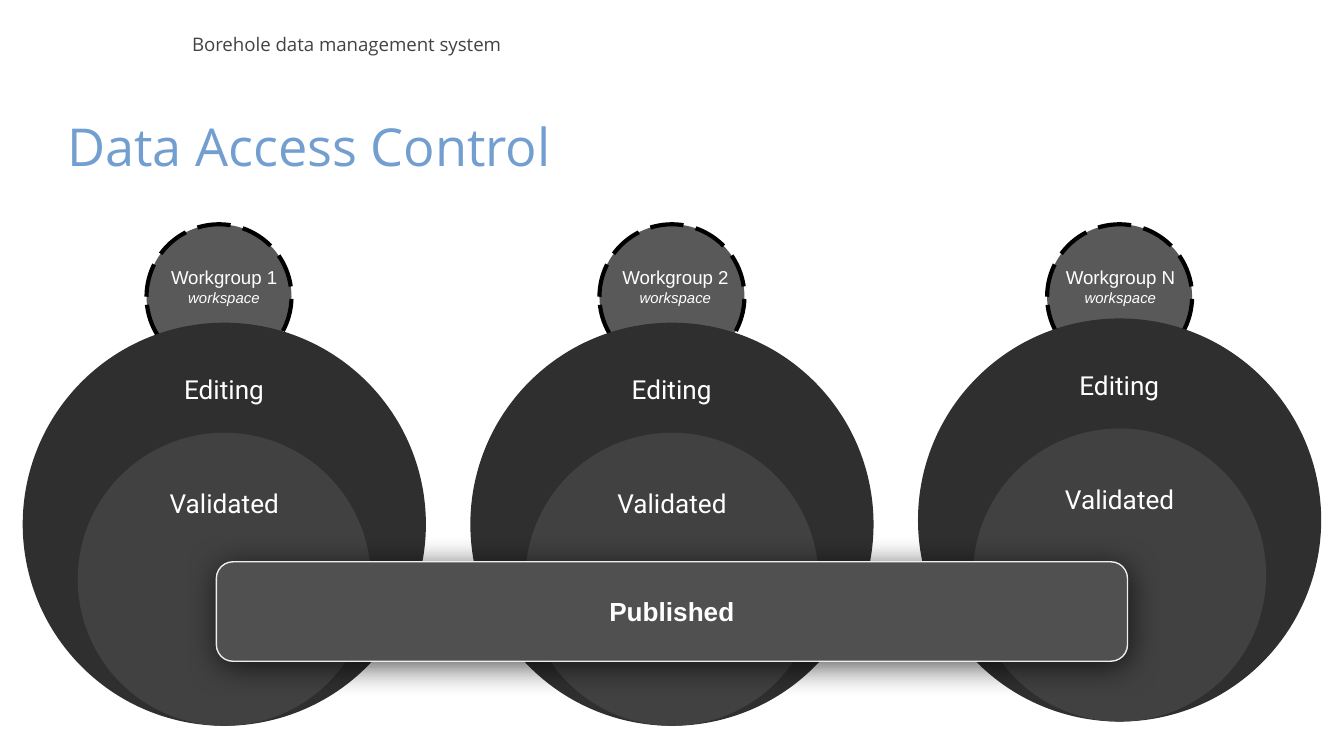
"""Build the Data Access Control slide with three workgroups and a shared published area."""
from lxml import etree
from pptx import Presentation
from pptx.dml.color import RGBColor
from pptx.enum.dml import MSO_LINE
from pptx.enum.shapes import MSO_SHAPE
from pptx.enum.text import MSO_ANCHOR, MSO_AUTO_SIZE, PP_ALIGN
from pptx.oxml import parse_xml
from pptx.oxml.ns import nsdecls
from pptx.util import Cm, Pt

BLACK = RGBColor(0x00, 0x00, 0x00)
WHITE = RGBColor(0xFF, 0xFF, 0xFF)
TITLE_BLUE = RGBColor(0x72, 0x9F, 0xCF)
HEADER_GRAY = RGBColor(0x43, 0x43, 0x43)
WORKSPACE_GRAY = RGBColor(0x59, 0x59, 0x59)
EDITING_GRAY = RGBColor(0x2F, 0x2F, 0x2F)
VALIDATED_GRAY = RGBColor(0x41, 0x41, 0x41)
PUBLISHED_GRAY = RGBColor(0x50, 0x50, 0x50)
BORDER_GRAY = RGBColor(0xEE, 0xEE, 0xEE)


def add_circle(shapes, left, top, size, color):
    circle = shapes.add_shape(MSO_SHAPE.OVAL, Cm(left), Cm(top), Cm(size), Cm(size))
    circle.shadow.inherit = False
    circle.fill.solid()
    circle.fill.fore_color.rgb = color
    circle.line.fill.background()
    return circle


def set_text(shape, lines, font_name, color, align=PP_ALIGN.CENTER, anchor=MSO_ANCHOR.MIDDLE):
    frame = shape.text_frame
    frame.word_wrap = True
    frame.auto_size = MSO_AUTO_SIZE.NONE
    frame.vertical_anchor = anchor
    frame.margin_left = frame.margin_right = frame.margin_top = frame.margin_bottom = Cm(0.25)
    frame.text = "\n".join(text for text, size in lines)
    for paragraph, (text, size) in zip(frame.paragraphs, lines):
        paragraph.alignment = align
        paragraph.font.name = font_name
        paragraph.font.size = Pt(size)
        paragraph.font.color.rgb = color
    return frame


presentation = Presentation()
presentation.slide_width = Cm(25.4)
presentation.slide_height = Cm(14.29)
slide = presentation.slides.add_slide(presentation.slide_layouts[5])

header = slide.shapes.add_textbox(Cm(3.38), Cm(0.46), Cm(20.9), Cm(0.74))
set_text(header, [("Borehole data management system", 10)], "Open Sans", HEADER_GRAY, PP_ALIGN.LEFT)

title = slide.shapes.title
title.left, title.top, title.width, title.height = Cm(1.02), Cm(1.9), Cm(23.52), Cm(1.98)
set_text(title, [("Data Access Control", 28)], "Open Sans", TITLE_BLUE, PP_ALIGN.LEFT, MSO_ANCHOR.TOP)

workgroups = [
    ("Workgroup 1", 2.77, 6.1, 2.57),
    ("Workgroup 2", 11.33, 6.1, 11.1),
    ("Workgroup N", 19.79, 6.02, 19.51),
]
for index, (name, workspace_left, top, label_left) in enumerate(workgroups):
    left = 0.43 + index * 8.46
    group = slide.shapes.add_group_shape()
    workspace = add_circle(group.shapes, workspace_left, 4.24, 2.74, WORKSPACE_GRAY)
    workspace.line.color.rgb = BLACK
    workspace.line.width = Pt(2.25)
    workspace.line.dash_style = MSO_LINE.LONG_DASH

    add_circle(group.shapes, left, top, 7.62, EDITING_GRAY)
    editing = group.shapes.add_textbox(Cm(left + 1.93), Cm(top + 0.58), Cm(3.75), Cm(1.35))
    set_text(editing, [("Editing", 14)], "Roboto", WHITE)

    add_circle(group.shapes, left + 1.04, top + 2.08, 5.54, VALIDATED_GRAY)
    validated = group.shapes.add_textbox(Cm(left + 2.06), Cm(top + 2.77), Cm(3.5), Cm(1.27))
    set_text(validated, [("Validated", 14)], "Roboto", WHITE)

published = slide.shapes.add_shape(MSO_SHAPE.ROUNDED_RECTANGLE, Cm(4.09), Cm(10.62), Cm(17.22), Cm(1.88))
published.fill.solid()
published.fill.fore_color.rgb = PUBLISHED_GRAY
published.line.color.rgb = BORDER_GRAY
published.line.width = Pt(0.75)
published.shadow.inherit = False
effects = published.element.spPr.find("{*}effectLst")
effects.append(parse_xml(
    f'<a:outerShdw {nsdecls("a")} blurRad="{Pt(16.9)}" dist="{Pt(1.5)}" dir="5400000" '
    'algn="ctr" rotWithShape="0"><a:srgbClr val="000000"><a:alpha val="68000"/></a:srgbClr></a:outerShdw>'
))
published_frame = set_text(published, [("Published", 14)], "Arial", WHITE)
published_frame.paragraphs[0].font.bold = True

for name, workspace_left, top, label_left in workgroups:
    label = slide.shapes.add_textbox(Cm(label_left), Cm(4.24), Cm(3.33), Cm(2.34))
    label_frame = set_text(label, [(name, 10), ("workspace", 8)], "Arial", WHITE)
    label_frame.paragraphs[1].font.italic = True

presentation.save("out.pptx")
